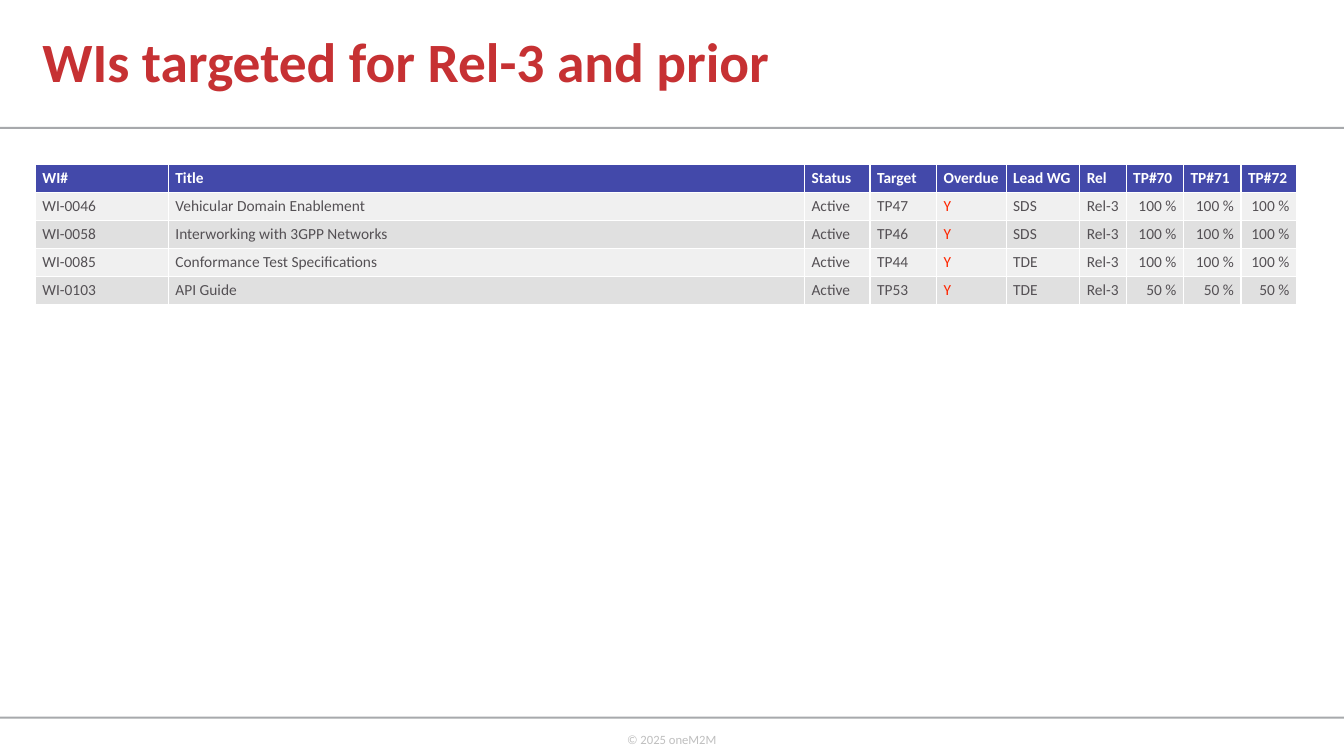
from lxml import etree
from pptx import Presentation, util as u
from pptx.dml.color import RGBColor
from pptx.enum import shapes, text
from pptx.oxml.ns import qn

# Content
TITLE = "WIs targeted for Rel-3 and prior"
FOOTER = "© 2025 oneM2M"
# heading, width in px
COLUMNS = [("WI#", 132), ("Title", 631), ("Status", 65), ("Target", 66),
           ("Overdue", 69), ("Lead WG", 73), ("Rel", 46),
           ("TP#70", 57), ("TP#71", 57), ("TP#72", 55)]
# number, title, target, lead group, progress
ITEMS = [
    ("WI-0046", "Vehicular Domain Enablement", "TP47", "SDS", "100 %"),
    ("WI-0058", "Interworking with 3GPP Networks", "TP46", "SDS", "100 %"),
    ("WI-0085", "Conformance Test Specifications", "TP44", "TDE", "100 %"),
    ("WI-0103", "API Guide", "TP53", "TDE", "50 %"),
]
COLORS = {"title": "C63133", "rule": "A7A9AC", "footer": "BFBFBF",
          "header": "4349AA", "odd": "F0F0F0", "even": "E0E0E0",
          "text": "545054", "overdue": "FF2600", "white": "FFFFFF"}
FONT = "Calibri"
PX = 9144  # 100 px to the inch
W, H = 1333, 750
OVERDUE_COL, FIRST_PROGRESS_COL = 4, 7


def px(*values):
    return [u.Emu(v * PX) for v in values]


def rgb(name):
    return RGBColor.from_string(COLORS[name])


def style(p, size, color, bold=False):
    for r in p.runs:
        r.font.name, r.font.size, r.font.bold = FONT, u.Pt(size), bold
        r.font.color.rgb = rgb(color)


def set_insets(tf):
    tf.margin_left, tf.margin_top, tf.margin_right, tf.margin_bottom = px(5, 5, 5, 5)


def set_borders(cell):
    tcPr = cell._tc.get_or_add_tcPr()
    for i, side in enumerate(("lnL", "lnR", "lnT", "lnB")):
        ln = etree.Element(qn("a:" + side), w=str(u.Pt(1)))
        fill = etree.SubElement(ln, qn("a:solidFill"))
        etree.SubElement(fill, qn("a:srgbClr"), val=COLORS["white"])
        tcPr.insert(i, ln)


prs = Presentation()
prs.slide_width, prs.slide_height = px(W, H)
s = prs.slides.add_slide(prs.slide_layouts[5])

# Rules above and below the content
for top in (126, 711):
    sp = s.shapes.add_shape(shapes.MSO_SHAPE.RECTANGLE, *px(0, top, W, 2))
    sp.shadow.inherit = False
    sp.fill.solid()
    sp.fill.fore_color.rgb = rgb("rule")
    sp.line.fill.background()

# Footer
tf = s.shapes.add_textbox(*px(617, 721, 102, 25)).text_frame
set_insets(tf)
tf.word_wrap = False
tf.text = FOOTER
style(tf.paragraphs[0], 9, "footer")

# Title
sp = s.shapes.title
sp.left, sp.top, sp.width, sp.height = px(37, 0, 859, 128)
tf = sp.text_frame
set_insets(tf)
tf.word_wrap = True
tf.auto_size = text.MSO_AUTO_SIZE.NONE
tf.vertical_anchor = text.MSO_ANCHOR.MIDDLE
tf.text = TITLE
p = tf.paragraphs[0]
p.alignment = text.PP_ALIGN.LEFT
p.line_spacing = 0.9
style(p, 39.6, "title", True)

# Work item table
rows = [[heading for heading, _ in COLUMNS]]
for number, name, target, group, progress in ITEMS:
    rows.append([number, name, "Active", target, "Y", group, "Rel-3"] + [progress] * 3)
widths = [width for _, width in COLUMNS]
table = s.shapes.add_table(len(rows), len(widths),
                           *px(35, 163, sum(widths), 139)).table
for column, width in zip(table.columns, px(*widths)):
    column.width = width
for i, values in enumerate(rows):
    header = i == 0
    fill = "header" if header else "odd" if i % 2 else "even"
    for j, value in enumerate(values):
        cell = table.cell(i, j)
        cell.margin_left, cell.margin_top, cell.margin_right, cell.margin_bottom = px(7, 0, 7, 0)
        cell.vertical_anchor = text.MSO_ANCHOR.MIDDLE
        cell.fill.solid()
        cell.fill.fore_color.rgb = rgb(fill)
        set_borders(cell)
        cell.text = value
        p = cell.text_frame.paragraphs[0]
        if not header and j >= FIRST_PROGRESS_COL:
            p.alignment = text.PP_ALIGN.RIGHT
        color = "white" if header else "overdue" if j == OVERDUE_COL else "text"
        style(p, 11, color, header)

prs.save("out.pptx")
